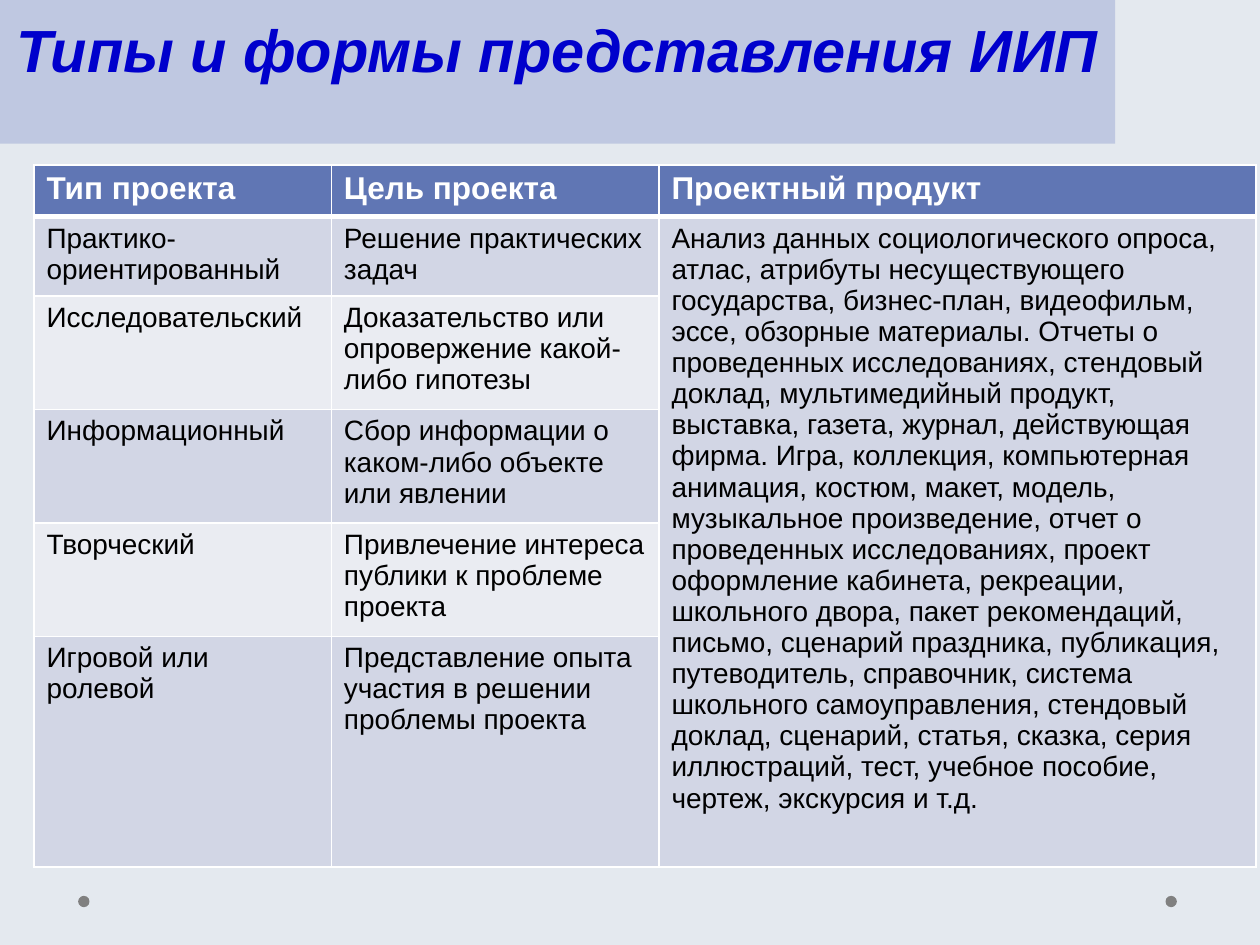
from lxml import etree
from pptx import Presentation
from pptx.dml.color import RGBColor
from pptx.enum.shapes import MSO_SHAPE as Shape
from pptx.enum.text import MSO_ANCHOR as Anchor, MSO_AUTO_SIZE as AutoSize, PP_ALIGN as Align
from pptx.oxml.ns import qn
from pptx.util import Inches, Pt

TITLE = "Типы и формы представления ИИП"
HEADERS = ["Тип проекта", "Цель проекта", "Проектный продукт"]
PROJECTS = [
    ("Практико-ориентированный", "Решение практических задач"),
    ("Исследовательский", "Доказательство или опровержение какой-либо гипотезы"),
    ("Информационный", "Сбор информации о каком-либо объекте или явлении"),
    ("Творческий", "Привлечение интереса публики к проблеме проекта"),
    ("Игровой или ролевой", "Представление опыта участия в решении проблемы проекта"),
]
PRODUCTS = (
    "Анализ данных социологического опроса, атлас, атрибуты несуществующего "
    "государства, бизнес-план, видеофильм, эссе, обзорные материалы. Отчеты о "
    "проведенных исследованиях, стендовый доклад, мультимедийный продукт, "
    "выставка, газета, журнал, действующая фирма. Игра, коллекция, компьютерная "
    "анимация, костюм, макет, модель, музыкальное произведение, отчет о "
    "проведенных исследованиях, проект оформление кабинета, рекреации, "
    "школьного двора, пакет рекомендаций, письмо, сценарий праздника, публикация, "
    "путеводитель, справочник, система школьного самоуправления, стендовый "
    "доклад, сценарий, статья, сказка, серия иллюстраций, тест, учебное пособие, "
    "чертеж, экскурсия и т.д."
)
COL_WIDTHS = [2.36, 2.6, 4.74]
ROW_HEIGHTS = [0.41, 0.63, 0.9, 0.9, 0.9, 1.83]
BANDS = ["D2D6E5", "EAECF2"]


def paint(fill, color):
    """Give a fill one solid colour from a hex string."""
    fill.solid()
    fill.fore_color.rgb = RGBColor.from_string(color)


def write(tf, text, size=16, color="000000", bold=False, italic=False, align=Align.LEFT):
    """Write one formatted paragraph into a text frame."""
    tf.word_wrap = True
    p = tf.paragraphs[0]
    p.alignment = align
    r = p.add_run()
    r.text = text
    font = r.font
    font.name, font.size, font.bold, font.italic = "Arial", Pt(size), bold, italic
    font.color.rgb = RGBColor.from_string(color)


def set_borders(cell, color="FFFFFF", **widths):
    """Draw cell borders, 1 pt unless a side (L, R, T, B) gives its width."""
    tc_pr = cell._tc.get_or_add_tcPr()
    for i, side in enumerate("LRTB"):
        ln = etree.Element(qn(f"a:ln{side}"), w=str(Pt(widths.get(side, 1))))
        fill = etree.SubElement(ln, qn("a:solidFill"))
        etree.SubElement(fill, qn("a:srgbClr"), val=color)
        tc_pr.insert(i, ln)


def add_title(slide, left, top, width, height):
    """Place the title placeholder as a filled band."""
    sp = slide.shapes.title
    sp.left, sp.top, sp.width, sp.height = map(Inches, (left, top, width, height))
    paint(sp.fill, "BFC8E1")
    tf = sp.text_frame
    tf.auto_size = AutoSize.NONE
    tf.vertical_anchor = Anchor.TOP
    tf.margin_top = Inches(0.1)
    write(tf, TITLE, size=34, color="0000CC", bold=True, italic=True, align=Align.CENTER)


def add_project_table(slide, left, top):
    """Place the table of project types, goals and products."""
    box = map(Inches, (left, top, sum(COL_WIDTHS), sum(ROW_HEIGHTS)))
    table = slide.shapes.add_table(len(ROW_HEIGHTS), len(COL_WIDTHS), *box).table
    for column, width in zip(table.columns, COL_WIDTHS):
        column.width = Inches(width)
    for row, height in zip(table.rows, ROW_HEIGHTS):
        row.height = Inches(height)

    for col, text in enumerate(HEADERS):
        cell = table.cell(0, col)
        paint(cell.fill, "6076B4")
        set_borders(cell, B=3)
        write(cell.text_frame, text, size=18, color="FFFFFF", bold=True)

    table.cell(1, 2).merge(table.cell(len(PROJECTS), 2))
    for row, project in enumerate(PROJECTS, start=1):
        texts = [*project, PRODUCTS if row == 1 else ""]
        for col, text in enumerate(texts):
            cell = table.cell(row, col)
            paint(cell.fill, BANDS[0 if col == 2 else (row - 1) % 2])
            set_borders(cell, T=3 if row == 1 else 1)
            if text:
                write(cell.text_frame, text)


def add_dot(slide, left, top, size=0.09):
    """Place one grey footer dot."""
    sp = slide.shapes.add_shape(Shape.OVAL, *map(Inches, (left, top, size, size)))
    sp.shadow.inherit = False
    paint(sp.fill, "808080")
    sp.line.fill.background()


def main():
    """Build the slide and save it."""
    prs = Presentation()
    prs.slide_width, prs.slide_height = Inches(10), Inches(7.5)
    s = prs.slides.add_slide(prs.slide_layouts.get_by_name("Title Only"))
    paint(s.background.fill, "E4E9EF")
    for left in (0.62, 9.25):
        add_dot(s, left, 7.11)
    add_title(s, 0, 0, 8.85, 1.14)
    add_project_table(s, 0.27, 1.31)
    prs.save("out.pptx")


if __name__ == "__main__":
    main()
